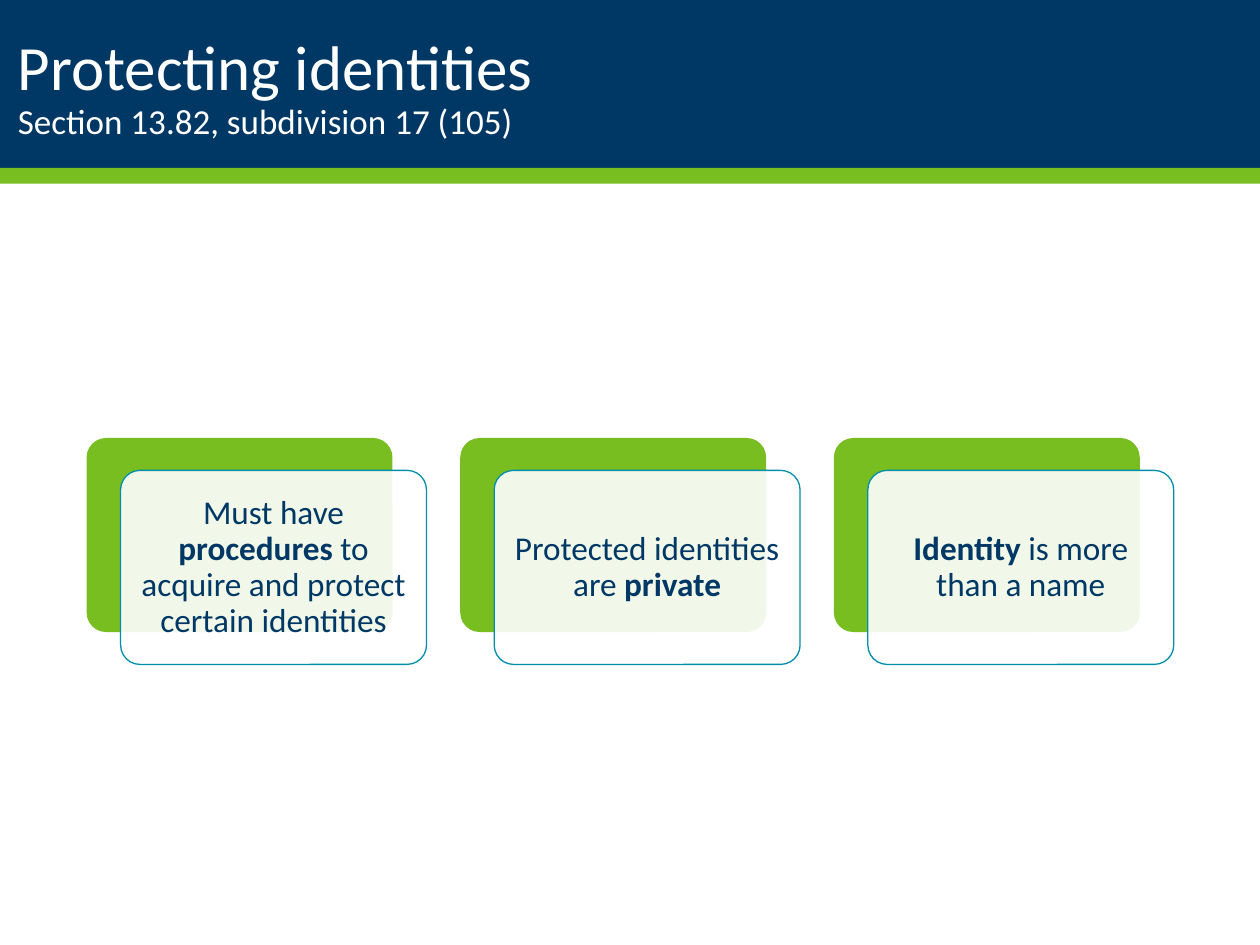
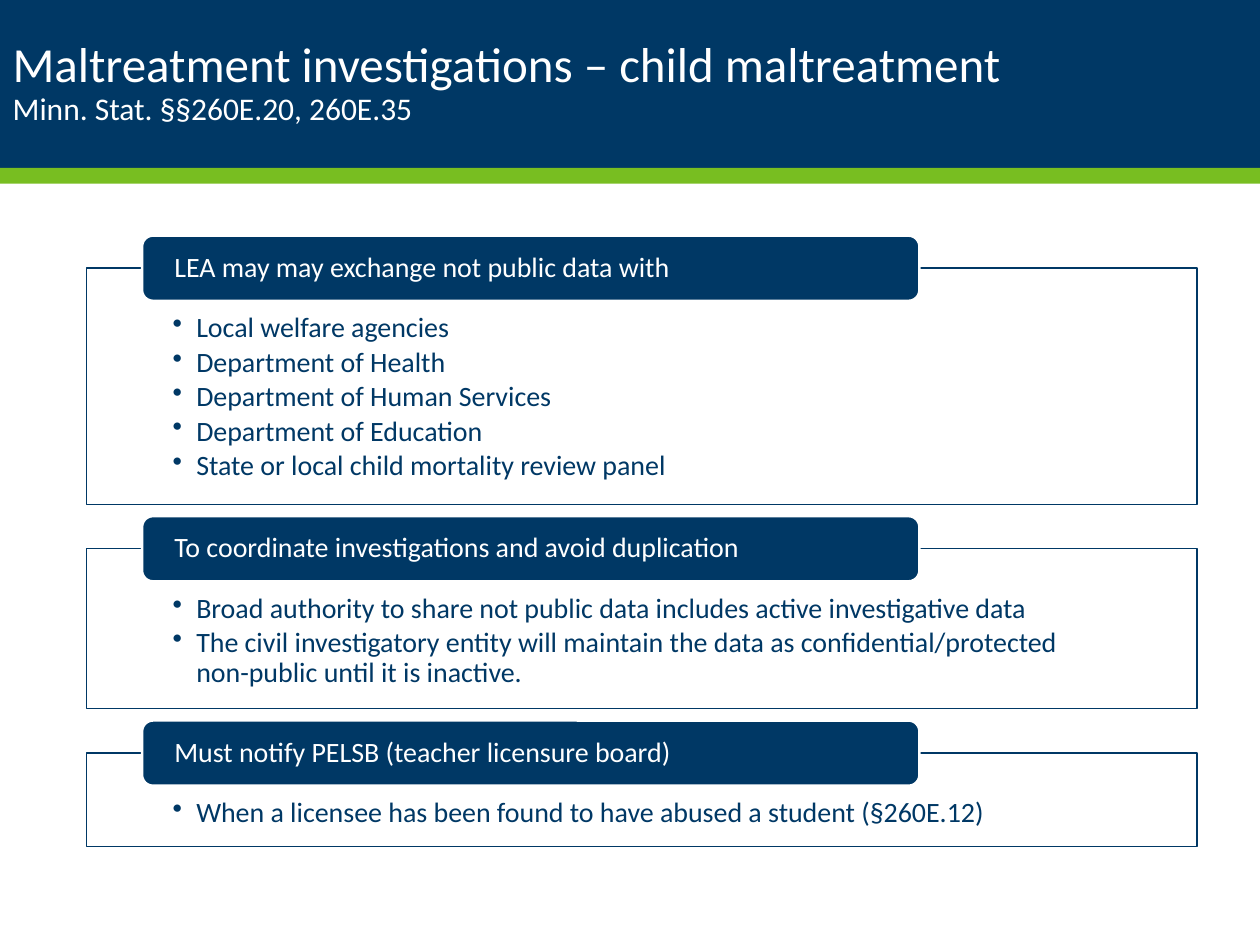
from dataclasses import dataclass
from typing import NamedTuple

from lxml.etree import SubElement
from pptx import Presentation
from pptx.dml.color import RGBColor
from pptx.enum.shapes import MSO_SHAPE as Preset
from pptx.enum.text import MSO_ANCHOR as Anchor, MSO_AUTO_SIZE as AutoSize, PP_ALIGN as Align
from pptx.oxml.ns import qn
from pptx.shapes.autoshape import Shape
from pptx.slide import Slide, SlideLayout
from pptx.text.text import TextFrame, _Paragraph as Paragraph
from pptx.util import Pt


@dataclass(frozen=True)
class Theme:
    font: str = "Calibri"
    navy: RGBColor = RGBColor(0x00, 0x38, 0x65)
    green: RGBColor = RGBColor(0x78, 0xBE, 0x21)
    teal: RGBColor = RGBColor(0x00, 0x8E, 0xAA)
    white: RGBColor = RGBColor(0xFF, 0xFF, 0xFF)
    card_size: float = 19
    panel_size: float = 16
    line_spacing: float = 0.9
    veil_opacity: int = 90


THEME = Theme()
SLIDE_WIDTH, SLIDE_HEIGHT = 720, 540
TITLE_ONLY = 5


class Box(NamedTuple):
    left: float
    top: float
    width: float
    height: float


class Outline(NamedTuple):
    color: RGBColor
    width: float


class Heading(NamedTuple):
    title: str
    subtitle: str
    title_size: float
    subtitle_size: float
    box: Box


class Phrase(NamedTuple):
    text: str
    bold: bool = False


class Panel(NamedTuple):
    header: str
    items: tuple[str, ...]
    height: float


IDENTITY_HEADING = Heading("Protecting identities", "Section 13.82, subdivision 17 (105)",
                           36, 20, Box(3, 6, 620.5, 90))
IDENTITY_CARDS = (
    (Phrase("Must have "), Phrase("procedures", True),
     Phrase(" to acquire and protect certain identities")),
    (Phrase("Protected identities are "), Phrase("private", True)),
    (Phrase("Identity", True), Phrase(" is more than a name")),
)
MALTREATMENT_HEADING = Heading("Maltreatment investigations – child maltreatment",
                               "Minn. Stat. §§260E.20, 260E.35",
                               28, 18, Box(0, 12, 620.5, 72))
MALTREATMENT_PANELS = (
    Panel("LEA may may exchange not public data with",
          ("Local welfare agencies", "Department of Health", "Department of Human Services",
           "Department of Education", "State or local child mortality review panel"), 135),
    Panel("To coordinate investigations and avoid duplication",
          ("Broad authority to share not public data includes active investigative data",
           "The civil investigatory entity will maintain the data as "
           "confidential/protected non-public until it is inactive."), 91.5),
    Panel("Must notify PELSB (teacher licensure board)",
          ("When a licensee has been found to have abused a student (§260E.12)",), 53.5),
)


def add_box(slide: Slide, preset: Preset, box: Box, fill: RGBColor,
            outline: Outline | None = None) -> Shape:
    shape = slide.shapes.add_shape(preset, *map(Pt, box))
    shape.shadow.inherit = False
    shape.fill.solid()
    shape.fill.fore_color.rgb = fill
    if outline:
        shape.line.color.rgb = outline.color
        shape.line.width = Pt(outline.width)
    else:
        shape.line.fill.background()
    return shape


def set_opacity(shape: Shape, percent: int) -> None:
    color = shape.element.spPr.find(qn("a:solidFill"))[0]
    SubElement(color, qn("a:alpha"), val=str(percent * 1000))


def set_frame(frame: TextFrame, anchor: Anchor, horizontal: float,
              top: float, bottom: float) -> None:
    frame.word_wrap = True
    frame.vertical_anchor = anchor
    frame.margin_left = frame.margin_right = Pt(horizontal)
    frame.margin_top, frame.margin_bottom = Pt(top), Pt(bottom)


def style_paragraph(paragraph: Paragraph, size: float, color: RGBColor,
                    align: Align = Align.LEFT) -> None:
    paragraph.alignment = align
    paragraph.line_spacing = THEME.line_spacing
    paragraph.font.name = THEME.font
    paragraph.font.size = Pt(size)
    paragraph.font.color.rgb = color


def add_bullet(paragraph: Paragraph, indent: float) -> None:
    properties = paragraph._p.get_or_add_pPr()
    properties.set("marL", str(Pt(indent)))
    properties.set("indent", str(-Pt(indent)))
    bullet = SubElement(properties, qn("a:buChar"), char="•")
    properties.find(qn("a:defRPr")).addprevious(bullet)


def add_bands(slide: Slide, layout: SlideLayout) -> None:
    """Draw the title bands and move them behind everything on the layout."""
    bands = ((Box(0, 0, SLIDE_WIDTH, 96), THEME.navy),
             (Box(0, 96, SLIDE_WIDTH, 9), THEME.green))
    tree = layout.element.cSld.spTree
    for position, (box, color) in enumerate(bands, start=2):
        tree.insert(position, add_box(slide, Preset.RECTANGLE, box, color).element)


def add_heading(slide: Slide, heading: Heading) -> None:
    title = slide.shapes.title
    title.left, title.top, title.width, title.height = map(Pt, heading.box)
    frame = title.text_frame
    frame.auto_size = AutoSize.NONE
    set_frame(frame, Anchor.MIDDLE, 7.2, 3.6, 3.6)
    paragraph = frame.paragraphs[0]
    style_paragraph(paragraph, heading.title_size, THEME.white)
    paragraph.add_run().text = heading.title
    paragraph.add_line_break()
    subtitle = paragraph.add_run()
    subtitle.text = heading.subtitle
    subtitle.font.size = Pt(heading.subtitle_size)


def add_card(slide: Slide, back: Box, phrases: tuple[Phrase, ...]) -> None:
    """Draw a green card with a translucent text card shifted over it."""
    front = back._replace(left=back.left + 19.4, top=back.top + 18.5)
    cards = (add_box(slide, Preset.ROUNDED_RECTANGLE, back, THEME.green),
             add_box(slide, Preset.ROUNDED_RECTANGLE, front, THEME.white,
                     Outline(THEME.teal, 0.75)))
    for card in cards:
        card.adjustments[0] = 0.1
    set_opacity(cards[1], THEME.veil_opacity)
    frame = cards[1].text_frame
    set_frame(frame, Anchor.MIDDLE, 5.7, 5.7, 5.7)
    paragraph = frame.paragraphs[0]
    style_paragraph(paragraph, THEME.card_size, THEME.navy, Align.CENTER)
    for phrase in phrases:
        run = paragraph.add_run()
        run.text = phrase.text
        if phrase.bold:
            run.font.bold = True


def add_panel(slide: Slide, panel: Panel, box: Box) -> None:
    """Draw a framed bullet list with its header across the top edge."""
    body = add_box(slide, Preset.RECTANGLE, box, THEME.white, Outline(THEME.navy, 0.85))
    set_opacity(body, THEME.veil_opacity)
    frame = body.text_frame
    set_frame(frame, Anchor.TOP, 49.2, 26, 8.6)
    for index, item in enumerate(panel.items):
        paragraph = frame.add_paragraph() if index else frame.paragraphs[0]
        paragraph.text = item
        style_paragraph(paragraph, THEME.panel_size, THEME.navy)
        paragraph.space_after = Pt(2.4)
        add_bullet(paragraph, 13.5)

    header_box = Box(box.left + 0.05 * box.width, box.top - 18.5, 0.7 * box.width, 37.2)
    header = add_box(slide, Preset.ROUNDED_RECTANGLE, header_box, THEME.navy,
                     Outline(THEME.white, 1.35))
    set_frame(header.text_frame, Anchor.MIDDLE, 16.6, 0, 0)
    paragraph = header.text_frame.paragraphs[0]
    paragraph.text = panel.header
    style_paragraph(paragraph, THEME.panel_size, THEME.white)


def add_identity_cards(slide: Slide) -> None:
    first, pitch = Box(49.5, 250.3, 174.8, 110.9), 213.5
    for index, phrases in enumerate(IDENTITY_CARDS):
        add_card(slide, first._replace(left=first.left + index * pitch), phrases)


def add_maltreatment_panels(slide: Slide) -> None:
    top, gap = 153.2, 25.3
    for panel in MALTREATMENT_PANELS:
        add_panel(slide, panel, Box(49.5, top, 634.5, panel.height))
        top += panel.height + gap


def main() -> None:
    presentation = Presentation()
    presentation.slide_width, presentation.slide_height = Pt(SLIDE_WIDTH), Pt(SLIDE_HEIGHT)
    layout = presentation.slide_layouts[TITLE_ONLY]

    identities = presentation.slides.add_slide(layout)
    add_bands(identities, layout)
    add_heading(identities, IDENTITY_HEADING)
    add_identity_cards(identities)

    maltreatment = presentation.slides.add_slide(layout)
    add_heading(maltreatment, MALTREATMENT_HEADING)
    add_maltreatment_panels(maltreatment)

    presentation.save("out.pptx")


if __name__ == "__main__":
    main()
